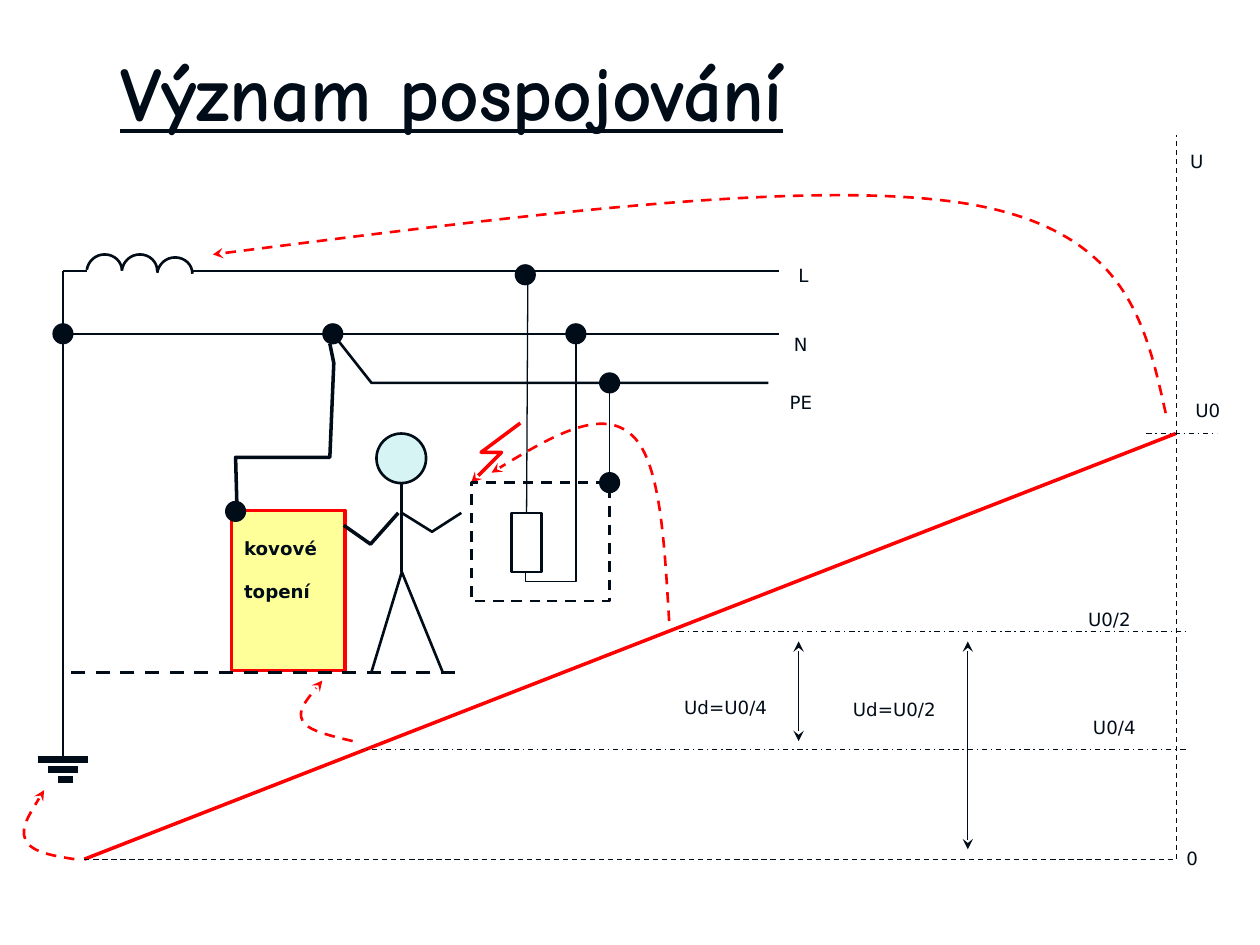
from dataclasses import dataclass

from lxml import etree
from pptx import Presentation
from pptx.dml.color import RGBColor
from pptx.enum.dml import MSO_LINE
from pptx.enum.shapes import MSO_CONNECTOR, MSO_SHAPE
from pptx.enum.text import MSO_ANCHOR, PP_ALIGN
from pptx.oxml.ns import qn
from pptx.util import Cm, Pt

STRAIGHT = MSO_CONNECTOR.STRAIGHT
RECT, OVAL = MSO_SHAPE.RECTANGLE, MSO_SHAPE.OVAL
DASH, DOT = MSO_LINE.DASH, MSO_LINE.DASH_DOT
TOP, MIDDLE = MSO_ANCHOR.TOP, MSO_ANCHOR.MIDDLE
LEFT, CENTER = PP_ALIGN.LEFT, PP_ALIGN.CENTER
COLORS = {"ink": "000C18", "red": "FF0000", "heat": "FFFF99", "skin": "33CCCC"}

Point = tuple[float, float]


@dataclass
class Pen:
    color: str = "ink"
    width: float = 1.5
    dash: object = None
    head: bool = False
    tail: bool = False


@dataclass
class Label:
    text: str
    x: float
    y: float
    width: float
    height: float = 0.97
    inset: float = 0.1
    anchor: object = TOP


WIRE, THIN, BOLD, BAR = Pen(), Pen(width=0.75), Pen(width=2), Pen(width=4)
AXIS, LEVEL = Pen(width=0.75, dash=DASH), Pen(width=0.75, dash=DOT)
SPAN = Pen(width=0.75, head=True, tail=True)
HINT = Pen("red", 1.5, DASH, tail=True)

deck = Presentation()
deck.slide_width, deck.slide_height = Cm(25.4), Cm(19.05)
shapes = deck.slides.add_slide(deck.slide_layouts[6]).shapes


def color(name: str) -> RGBColor:
    return RGBColor.from_string(COLORS[name])


def ink(shape, pen: Pen) -> None:
    line = shape.line
    line.color.rgb = color(pen.color)
    line.width = Pt(pen.width)
    if pen.dash is not None:
        line.dash_style = pen.dash
    stroke = shape._element.spPr.find(qn("a:ln"))
    for tag, wanted in (("a:headEnd", pen.head), ("a:tailEnd", pen.tail)):
        if wanted:
            etree.SubElement(stroke, qn(tag), type="stealth")


def wire(start: Point, end: Point, pen: Pen = WIRE):
    ends = [Cm(v) for v in (*start, *end)]
    item = shapes.add_connector(STRAIGHT, *ends)
    ink(item, pen)
    etree.SubElement(item._element.spPr, qn("a:effectLst"))
    return item


def trace(points: list[Point], pen: Pen = WIRE, curved: bool = False) -> None:
    """Draw an open outline; when curved, each three points make one Bézier."""
    first, *rest = [(Cm(x), Cm(y)) for x, y in points]
    form = shapes.build_freeform(*first)
    form.add_line_segments(rest, close=False)
    item = form.convert_to_shape()
    item.shadow.inherit = False
    item.fill.background()
    ink(item, pen)
    if curved:
        steps = list(item._element.iter(qn("a:lnTo")))
        for i in range(0, len(steps), 3):
            bend = etree.Element(qn("a:cubicBezTo"))
            steps[i].addprevious(bend)
            for step in steps[i:i + 3]:
                bend.append(step[0])
                step.getparent().remove(step)


def block(kind, x: float, y: float, width: float, height: float,
          pen: Pen = WIRE, fill: str = ""):
    item = shapes.add_shape(kind, Cm(x), Cm(y), Cm(width), Cm(height))
    item.shadow.inherit = False
    if fill:
        item.fill.solid()
        item.fill.fore_color.rgb = color(fill)
    else:
        item.fill.background()
    ink(item, pen)
    return item


def dot(x: float, y: float) -> None:
    block(OVAL, x - 0.2, y - 0.2, 0.4, 0.4, THIN, "ink")


def write(frame, text: str, align=CENTER, bold: bool = False) -> None:
    """Write one paragraph of lowered small text."""
    frame.word_wrap = True
    para = frame.paragraphs[0]
    para.alignment = align
    font = para.font
    font.name, font.size, font.bold = "DejaVu Sans", Pt(18), bold
    font.color.rgb = color("ink")
    run = para.add_run()
    run.text = text
    run._r.get_or_add_rPr().set("baseline", "-25000")


def label(item: Label) -> None:
    box = shapes.add_textbox(Cm(item.x), Cm(item.y), Cm(item.width), Cm(item.height))
    frame = box.text_frame
    frame.margin_left = frame.margin_right = Cm(item.inset)
    frame.margin_top = frame.margin_bottom = Cm(item.inset)
    frame.vertical_anchor = item.anchor
    write(frame, item.text)


# Title
frame = shapes.add_textbox(Cm(0.51), Cm(0.74), Cm(17.2), Cm(2.18)).text_frame
frame.word_wrap, frame.vertical_anchor = True, MIDDLE
para = frame.paragraphs[0]
para.text, para.alignment = "Význam pospojování", CENTER
font = para.font
font.name, font.size, font.bold, font.underline = "Comic Neue", Pt(44), True, True
font.color.rgb = color("ink")

# Voltage graph
wire((1.7, 17.32), (23.7, 8.74), Pen("red", 2))
wire((1.7, 17.32), (23.72, 17.32), AXIS)
wire((23.72, 17.32), (23.72, 2.72), AXIS)
for start, end, y in ((23.11, 24.54, 8.74), (13.69, 23.9, 12.73), (23.9, 7.29, 15.11)):
    wire((start, y), (end, y), LEVEL)
for x, end in ((19.51, 17.12), (16.1, 14.94)):
    wire((x, 12.93), (x, end), SPAN)

# Hints from the graph to the circuit
for points in (
    [(23.5, 8.33), (23.09, 6.5), (22.71, 4.65), (19.51, 4.11),
     (16.31, 3.58), (10.29, 4.37), (4.29, 5.13)],
    [(13.49, 12.52), (13.39, 10.87), (13.31, 9.22), (12.7, 8.74),
     (12.09, 8.23), (11, 8.86), (9.91, 9.53)],
    [(7.11, 14.94), (6.65, 14.83), (6.2, 14.73), (6.1, 14.53),
     (5.99, 14.33), (6.25, 14.02), (6.5, 13.72)],
    [(1.5, 17.32), (1.04, 17.25), (0.61, 17.17), (0.51, 16.92),
     (0.41, 16.69), (0.66, 16.31), (0.89, 15.93)],
):
    trace(points, HINT, curved=True)
trace([(10.49, 8.53), (9.7, 9.12), (10.11, 9.12), (9.5, 9.73)],
      Pen("red", 2, tail=True))

# Coil
ARC = [(0.71, 0), (0.71, -0.18), (0.56, -0.33), (0.36, -0.33),
       (0.18, -0.33), (0.03, -0.2), (0, -0.02)]
for i, y in enumerate((5.46, 5.46, 5.52)):
    trace([(1.75 + 0.71 * i + dx, y + dy) for dx, dy in ARC], curved=True)

# Mains and earth
wire((1.75, 5.46), (1.27, 5.46))
wire((3.86, 5.46), (15.7, 5.46))
wire((1.47, 6.73), (15.7, 6.73))
trace([(6.71, 6.73), (7.49, 7.72), (15.49, 7.72)])
wire((1.27, 5.46), (1.27, 15.32))
for start, end, y in ((0.76, 1.78, 15.32), (0.97, 1.57, 15.52), (1.17, 1.47, 15.72)):
    wire((start, y), (end, y), BAR)

# Appliance
load = block(RECT, 10.31, 10.34, 0.61, 1.19)
block(RECT, 9.5, 9.73, 2.79, 2.39, Pen(dash=DASH))
wire((10.64, 5.72), (10.61, 10.34), THIN).end_connect(load, 0)
trace([(10.59, 11.53), (10.59, 11.73), (11.61, 11.73), (11.61, 6.73)], THIN)
wire((12.29, 7.92), (12.29, 9.73), THIN)

# Heater and its bond
heater = block(RECT, 4.67, 10.29, 2.29, 3.23, Pen("red", 2), "heat")
heater.text_frame.vertical_anchor = TOP
write(heater.text_frame, "kovové topení", LEFT, bold=True)
wire((9.17, 13.56), (1.27, 13.56), Pen(width=2, dash=DASH))
trace([(6.65, 6.93), (6.73, 7.32), (6.65, 9.22), (4.75, 9.22), (4.78, 10.31)], BOLD)

# Person
face = block(OVAL, 7.59, 8.74, 1, 1, WIRE, "skin")
tint = face._element.spPr.find(qn("a:solidFill"))[0]
etree.SubElement(tint, qn("a:alpha"), val="20000")
wire((8.1, 9.73), (8.1, 11.53))
for x in (7.49, 8.92):
    wire((8.1, 11.53), (x, 13.54))
trace([(8.1, 10.34), (8.71, 10.72), (9.3, 10.34)])
trace([(8.03, 10.34), (7.47, 10.97), (6.93, 10.59)], BOLD)

# Junctions
for x, y in ((1.27, 6.73), (6.71, 6.73), (11.61, 6.73), (10.59, 5.54),
             (12.29, 7.72), (12.29, 9.73), (4.75, 10.31)):
    dot(x, y)

# Labels
for item in (
    Label("U", 23.72, 2.51, 0.81),
    Label("U0", 23.7, 7.52, 1.3),
    Label("0", 23.5, 16.56, 1.07),
    Label("U0/2", 21.21, 11.73, 2.31),
    Label("U0/4", 21.31, 13.92, 2.31),
    Label("Ud=U0/2", 16.38, 13.56, 3.3),
    Label("Ud=U0/4", 12.98, 13.51, 3.3),
    Label("L", 15.7, 4.95, 0.99, 0.76, 0, MIDDLE),
    Label("N", 15.7, 6.35, 0.89, 0.76, 0, MIDDLE),
    Label("PE", 15.7, 7.52, 0.89, 0.76, 0, MIDDLE),
):
    label(item)

deck.save("out.pptx")
